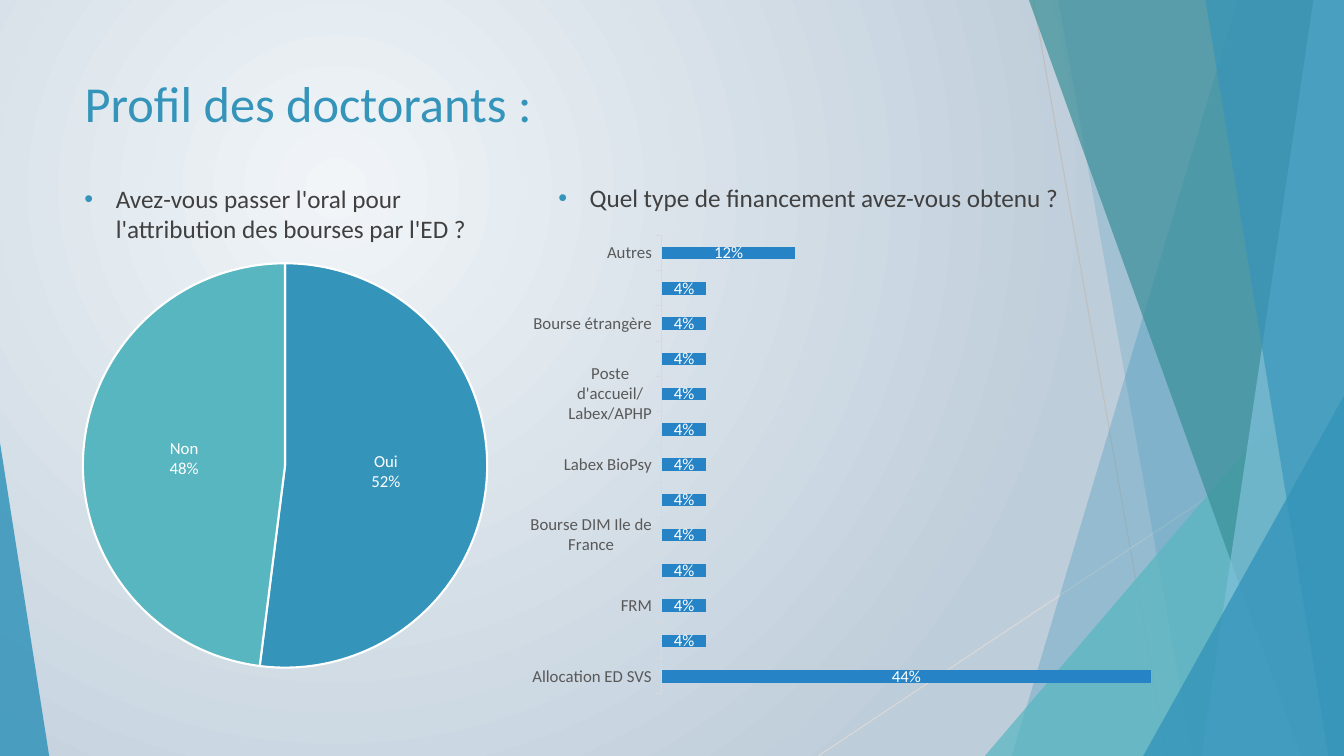
from lxml.etree import SubElement
from pptx import Presentation
from pptx.chart.data import CategoryChartData
from pptx.dml.color import RGBColor
from pptx.enum.chart import XL_CHART_TYPE, XL_LABEL_POSITION, XL_TICK_MARK
from pptx.enum.shapes import MSO_CONNECTOR, MSO_SHAPE
from pptx.enum.text import MSO_ANCHOR, PP_ALIGN
from pptx.oxml.ns import qn
from pptx.util import Cm, Pt

FONT = "Calibri"
BLUE = RGBColor(0x34, 0x94, 0xBA)
TEAL = RGBColor(0x58, 0xB6, 0xC0)
DARK_TEAL = RGBColor(0x3A, 0x8F, 0x98)
LIGHT_BLUE = RGBColor(0x7F, 0xC1, 0xDB)
BAR_BLUE = RGBColor(0x26, 0x83, 0xC6)
WHITE = RGBColor(0xFF, 0xFF, 0xFF)
TEXT_GREY = RGBColor(0x40, 0x40, 0x40)
AXIS_GREY = RGBColor(0x59, 0x59, 0x59)
RULE_GREY = RGBColor(0xBF, 0xBF, 0xBF)
PALE_GREY = RGBColor(0xD9, 0xD9, 0xD9)
BG_CENTRE = RGBColor(0xF1, 0xF5, 0xF8)
BG_EDGE = RGBColor(0xBE, 0xCD, 0xDA)

WIDTH, HEIGHT = 33.87, 19.05

# Every second bar has no name
FUNDING = [
    ("Allocation ED SVS", 0.44), ("", 0.04),
    ("FRM", 0.04), ("", 0.04),
    ("Bourse DIM Ile de France", 0.04), ("", 0.04),
    ("Labex BioPsy", 0.04), ("", 0.04),
    ("Poste d'accueil/Labex/APHP", 0.04), ("", 0.04),
    ("Bourse étrangère", 0.04), ("", 0.04),
    ("Autres", 0.12),
]
ORAL = [("Oui", 0.52), ("Non", 0.48)]


def cm_box(box):
    return [Cm(length) for length in box]


def style_font(font, size, color):
    font.name, font.size, font.bold = FONT, Pt(size), False
    font.color.rgb = color


def paint_background(slide):
    fill = slide.background.fill
    fill.gradient()
    for stop, color in zip(fill.gradient_stops, (BG_CENTRE, BG_EDGE)):
        stop.color.rgb = color
    gradient = slide.element.find(".//" + qn("a:gradFill"))
    gradient.remove(gradient.find(qn("a:lin")))
    circle = SubElement(gradient, qn("a:path"), {"path": "circle"})
    SubElement(circle, qn("a:fillToRect"),
               {"l": "50000", "t": "50000", "r": "100000", "b": "100000"})


def paint_facet(facet, color, opacity):
    facet.shadow.inherit = False
    facet.line.fill.background()
    facet.fill.solid()
    facet.fill.fore_color.rgb = color
    rgb = facet._element.spPr.find(qn("a:solidFill")).find(qn("a:srgbClr"))
    SubElement(rgb, qn("a:alpha"), {"val": str(opacity * 1000)})


def add_band(slide, top_x, bottom_x, color, opacity):
    """Full-height band from a slanted left edge to the slide's right edge."""
    outline = slide.shapes.build_freeform(Cm(top_x), 0)
    outline.add_line_segments([(Cm(WIDTH), 0), (Cm(WIDTH), Cm(HEIGHT)),
                               (Cm(bottom_x), Cm(HEIGHT))])
    paint_facet(outline.convert_to_shape(), color, opacity)


def add_corner(slide, left, top, width, apex, color, opacity):
    """Right triangle that stands on the slide's bottom edge."""
    corner = slide.shapes.add_shape(
        MSO_SHAPE.ISOSCELES_TRIANGLE,
        *cm_box((left, top, width, HEIGHT - top)))
    corner.adjustments[0] = apex
    paint_facet(corner, color, opacity)


def add_facets(slide):
    for ends, color in (((26.04, 0, 29.41, HEIGHT), RULE_GREY),
                        ((WIDTH, 10.24, 20.62, HEIGHT), PALE_GREY)):
        ray = slide.shapes.add_connector(MSO_CONNECTOR.STRAIGHT, *cm_box(ends))
        ray.line.color.rgb = color
        ray.line.width = Pt(0.75)
        SubElement(ray._element.spPr, qn("a:effectLst"))
    add_band(slide, 31.19, 25.5, BLUE, 30)
    add_band(slide, 26.67, 30.05, BLUE, 20)
    add_corner(slide, 24.82, 8.46, 9.05, 1, TEAL, 72)
    add_band(slide, 25.93, 32.79, DARK_TEAL, 70)
    add_band(slide, 33.1, 30.28, LIGHT_BLUE, 70)
    add_band(slide, 30.38, 33.48, BLUE, 65)
    add_corner(slide, 28.81, 9.98, 5.06, 1, BLUE, 80)
    add_corner(slide, 0, 11.15, 1.24, 0, BLUE, 85)


def add_title(slide, box, text):
    title = slide.shapes.title
    title.left, title.top, title.width, title.height = cm_box(box)
    frame = title.text_frame
    frame.vertical_anchor = MSO_ANCHOR.TOP
    heading = frame.paragraphs[0]
    heading.alignment = PP_ALIGN.LEFT
    run = heading.add_run()
    run.text = text
    style_font(run.font, 36, BLUE)


def add_question(slide, box, text):
    frame = slide.shapes.add_textbox(*cm_box(box)).text_frame
    frame.word_wrap = True
    question = frame.paragraphs[0]
    run = question.add_run()
    run.text = text
    style_font(run.font, 18, TEXT_GREY)
    # Hanging bullet
    props = question._p.get_or_add_pPr()
    indent = Cm(0.79)
    props.set("marL", str(indent))
    props.set("indent", str(-indent))
    bullet_color = SubElement(props, qn("a:buClr"))
    SubElement(bullet_color, qn("a:srgbClr"), {"val": str(BLUE)})
    SubElement(props, qn("a:buFont"), {"typeface": "Arial"})
    SubElement(props, qn("a:buChar"), {"char": "•"})


def add_answer_chart(slide, box, kind, answers, plot_area):
    """Chart with centred white percentages; plot_area is in chart fractions."""
    data = CategoryChartData(number_format="0%")
    data.categories = [name for name, _ in answers]
    data.add_series("Series 1", [share for _, share in answers])
    chart = slide.shapes.add_chart(kind, *cm_box(box), data).chart
    chart.has_legend = chart.has_title = False
    chart.font.name, chart.font.size = FONT, Pt(12)

    area = chart._chartSpace.chart.plotArea
    layout = area.find(qn("c:layout"))
    if layout is None:
        layout = area.makeelement(qn("c:layout"))
        area.insert(0, layout)
    manual = SubElement(layout, qn("c:manualLayout"))
    settings = [("layoutTarget", "inner"), ("xMode", "edge"), ("yMode", "edge")]
    for tag, value in settings + list(zip("xywh", plot_area)):
        SubElement(manual, qn("c:" + tag), {"val": str(value)})

    plot = chart.plots[0]
    plot.has_data_labels = True
    labels = plot.data_labels
    labels.show_value = True
    labels.show_percentage = False
    labels.number_format, labels.number_format_is_linked = "0%", False
    labels.position = XL_LABEL_POSITION.CENTER
    style_font(labels.font, 12, WHITE)
    return chart


def add_oral_pie(slide, box):
    chart = add_answer_chart(slide, box, XL_CHART_TYPE.PIE, ORAL,
                             (0.12, 0.03, 0.76, 0.94))
    plot = chart.plots[0]
    plot.vary_by_categories = True
    for index, color in enumerate((BLUE, TEAL)):
        slice_format = plot.series[0].points[index].format
        slice_format.fill.solid()
        slice_format.fill.fore_color.rgb = color
        slice_format.line.color.rgb = WHITE
        slice_format.line.width = Pt(1.5)
    # Category above its share
    plot.data_labels.show_category_name = True
    label_props = plot.data_labels._element
    separator = label_props.makeelement(qn("c:separator"))
    separator.text = "\n"
    label_props.find(qn("c:showBubbleSize")).addnext(separator)


def add_funding_bars(slide, box):
    chart = add_answer_chart(slide, box, XL_CHART_TYPE.BAR_CLUSTERED, FUNDING,
                             (0.2, 0.02, 0.78, 0.96))
    plot = chart.plots[0]
    plot.vary_by_categories = False
    plot.gap_width = 182
    bars = plot.series[0].format.fill
    bars.solid()
    bars.fore_color.rgb = BAR_BLUE

    shares = chart.value_axis
    shares.minimum_scale, shares.maximum_scale = 0, 0.5
    shares.has_major_gridlines = False
    shares.visible = False

    sources = chart.category_axis
    sources.major_tick_mark = XL_TICK_MARK.OUTSIDE
    style_font(sources.tick_labels.font, 12, AXIS_GREY)
    sources.format.line.color.rgb = PALE_GREY
    sources.format.line.width = Pt(0.75)
    # Label only the named bars
    skip = sources._element.makeelement(qn("c:tickLblSkip"), {"val": "2"})
    sources._element.find(qn("c:noMultiLvlLbl")).addprevious(skip)


def main():
    deck = Presentation()
    deck.slide_width, deck.slide_height = Cm(WIDTH), Cm(HEIGHT)
    slide = deck.slides.add_slide(deck.slide_layouts[5])
    paint_background(slide)
    add_facets(slide)
    add_title(slide, (1.88, 1.7, 23.88, 3.66), "Profil des doctorants :")
    add_oral_pie(slide, (0.48, 6.27, 13.41, 10.92))
    add_question(slide, (1.88, 4.5, 10.54, 1.8),
                 "Avez-vous passer l'oral pour l'attribution des bourses par l'ED ?")
    add_question(slide, (13.82, 4.47, 14.38, 1.02),
                 "Quel type de financement avez-vous obtenu ?")
    add_funding_bars(slide, (13.09, 5.69, 17.95, 12.04))
    deck.save("out.pptx")


if __name__ == "__main__":
    main()
